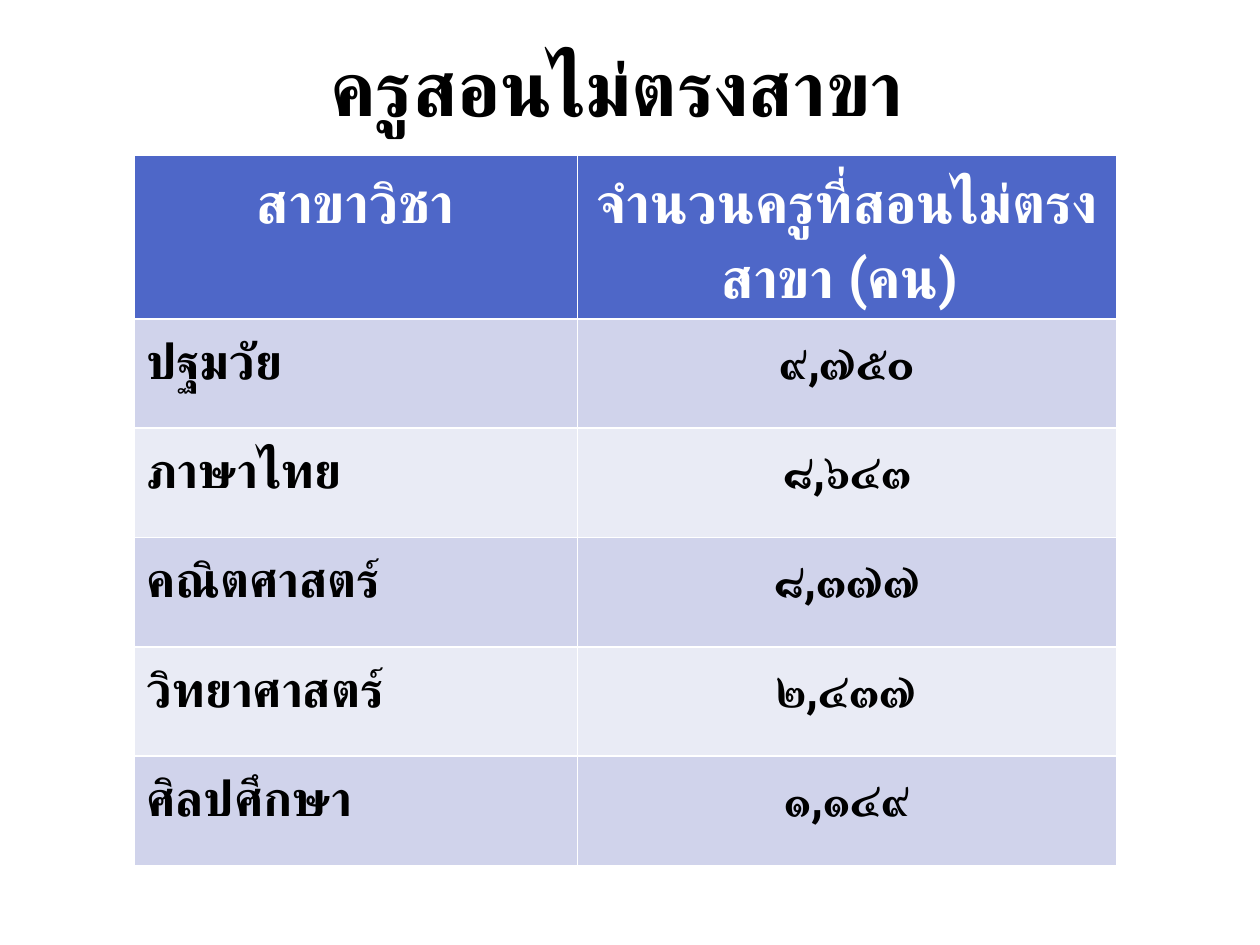
from lxml.etree import SubElement
from pptx import Presentation
from pptx.dml.color import RGBColor
from pptx.enum.text import MSO_ANCHOR, PP_ALIGN
from pptx.oxml.ns import qn
from pptx.util import Pt

FONT = "Roboto"
BLACK = RGBColor(0x00, 0x00, 0x00)
WHITE = RGBColor(0xFF, 0xFF, 0xFF)
HEADER_BLUE = RGBColor(0x4E, 0x67, 0xC8)
BAND_DARK = RGBColor(0xD0, 0xD3, 0xEB)
BAND_LIGHT = RGBColor(0xE9, 0xEB, 0xF5)

TITLE = "ครูสอนไม่ตรงสาขา"
ROWS = [
    ("สาขาวิชา", "จำนวนครูที่สอนไม่ตรงสาขา (คน) "),
    ("ปฐมวัย", "๙,๗๕๐"),
    ("ภาษาไทย", "๘,๖๔๓"),
    ("คณิตศาสตร์", "๘,๓๗๗"),
    ("วิทยาศาสตร์", "๒,๔๓๗"),
    ("ศิลปศึกษา", "๑,๑๔๙"),
]
COLUMN_WIDTHS = (253.5, 308.1)
HEADER_HEIGHT, ROW_HEIGHT = 79.2, 62.5


def write(frame, text, size, color=BLACK, align=PP_ALIGN.CENTER, spacing=None):
    para = frame.paragraphs[0]
    para.alignment = align
    para.line_spacing = spacing
    span = para.add_run()
    span.text = text
    span.font.name = FONT
    span.font.size = Pt(size)
    span.font.bold = True
    span.font.color.rgb = color
    SubElement(span.font._element, qn("a:cs"), typeface=FONT)


def main():
    deck = Presentation()
    deck.slide_width, deck.slide_height = Pt(720), Pt(540)
    page = deck.slides.add_slide(deck.slide_layouts[5])

    title = page.shapes.title
    title.left, title.top, title.width, title.height = Pt(14.4), Pt(9.4), Pt(676), Pt(79.2)
    title.text_frame.vertical_anchor = MSO_ANCHOR.MIDDLE
    write(title.text_frame, TITLE, 44)

    heights = [HEADER_HEIGHT] + [ROW_HEIGHT] * (len(ROWS) - 1)
    table = page.shapes.add_table(
        len(ROWS), len(COLUMN_WIDTHS), Pt(76.5), Pt(88.6),
        Pt(sum(COLUMN_WIDTHS)), Pt(sum(heights)),
    ).table
    for column, width in zip(table.columns, COLUMN_WIDTHS):
        column.width = Pt(width)

    for row_index, (texts, height) in enumerate(zip(ROWS, heights)):
        table.rows[row_index].height = Pt(height)
        header = row_index == 0
        band = BAND_DARK if row_index % 2 else BAND_LIGHT
        for column_index, text in enumerate(texts):
            cell = table.cell(row_index, column_index)
            cell.fill.solid()
            cell.fill.fore_color.rgb = HEADER_BLUE if header else band
            write(
                cell.text_frame, text, 32 if header else 28,
                color=WHITE if header else BLACK,
                align=PP_ALIGN.CENTER if header or column_index else PP_ALIGN.LEFT,
                spacing=1.15,
            )

    deck.save("out.pptx")


if __name__ == "__main__":
    main()
